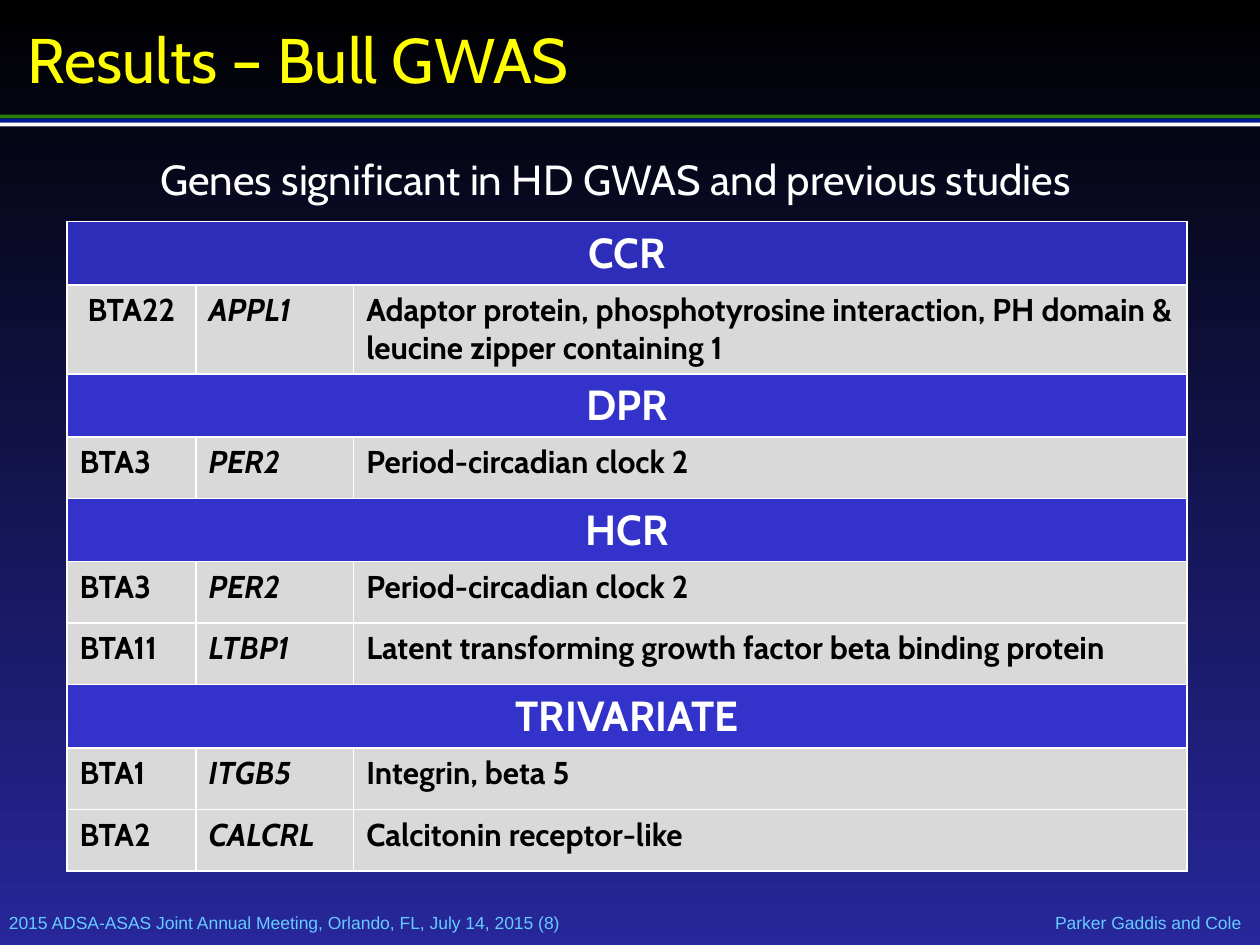
from dataclasses import dataclass

from pptx import Presentation
from pptx.dml.color import RGBColor
from pptx.enum.shapes import MSO_SHAPE
from pptx.enum.text import MSO_ANCHOR, PP_ALIGN
from pptx.util import Cm, Pt


@dataclass(frozen=True)
class Theme:
    font: str = "Cabin"
    footer_font: str = "Arial"
    title_size: int = 36
    heading_size: int = 24
    body_size: int = 18
    footer_size: int = 10
    title: str = "FFFF00"
    white: str = "FFFFFF"
    black: str = "000000"
    footer: str = "66CCFF"
    bg_bottom: str = "27279B"
    green: str = "2A7E00"
    blue: str = "001799"
    header: str = "2D2DB9"
    section: str = "3333CC"
    row: str = "D9D9D9"


theme = Theme()


def rgb(value):
    return RGBColor.from_string(value)


def write(tf, text, size, color, font=theme.font, align=PP_ALIGN.LEFT,
          bold=False, italic=False):
    """Fill a text frame with one formatted paragraph."""
    p = tf.paragraphs[0]
    p.text = text
    p.alignment = align
    p.font.name = font
    p.font.size = Pt(size)
    p.font.color.rgb = rgb(color)
    p.font.bold = bold
    p.font.italic = italic


prs = Presentation()
prs.slide_width, prs.slide_height = Cm(25.4), Cm(19.05)
s = prs.slides.add_slide(prs.slide_layouts[5])

# Background
bg = s.background.fill
bg.gradient()
bg.gradient_angle = 270
for stop, color, position in zip(bg.gradient_stops,
                                 (theme.black, theme.bg_bottom), (0, 1)):
    stop.color.rgb = rgb(color)
    stop.position = position

# Rules under the title
for top, color in ((2.31, theme.green), (2.47, theme.white), (2.39, theme.blue)):
    sp = s.shapes.add_shape(MSO_SHAPE.RECTANGLE, 0, Cm(top), prs.slide_width, Cm(0.08))
    sp.shadow.inherit = False
    sp.fill.solid()
    sp.fill.fore_color.rgb = rgb(color)
    sp.line.fill.background()

# Title
sp = s.shapes.title
sp.left, sp.top, sp.width, sp.height = Cm(0.43), Cm(0), Cm(24.54), Cm(2.34)
tf = sp.text_frame
tf.vertical_anchor = MSO_ANCHOR.MIDDLE
tf.margin_left = tf.margin_right = tf.margin_top = tf.margin_bottom = Cm(0.13)
write(tf, "Results – Bull GWAS", theme.title_size, theme.title)

# Subtitle
sp = s.shapes.add_textbox(Cm(1.83), Cm(2.97), Cm(21.16), Cm(1.5))
tf = sp.text_frame
tf.word_wrap = True
tf.margin_left = tf.margin_right = tf.margin_top = tf.margin_bottom = Cm(0.13)
write(tf, "Genes significant in HD GWAS and previous studies",
      theme.heading_size, theme.white, align=PP_ALIGN.CENTER)

# Gene table: a one-item row is a section heading
rows = [
    ("CCR",),
    ("BTA22", "APPL1", "Adaptor protein, phosphotyrosine interaction, "
     "PH domain & leucine zipper containing 1"),
    ("DPR",),
    ("BTA3", "PER2", "Period-circadian clock 2"),
    ("HCR",),
    ("BTA3", "PER2", "Period-circadian clock 2"),
    ("BTA11", "LTBP1", "Latent transforming growth factor beta binding protein"),
    ("TRIVARIATE",),
    ("BTA1", "ITGB5", "Integrin, beta 5"),
    ("BTA2", "CALCRL", "Calcitonin receptor-like"),
]
table = s.shapes.add_table(len(rows), 3, Cm(1.35), Cm(4.47), Cm(22.58), Cm(12.4)).table
table.horz_banding = False
for column, width in zip(table.columns, (2.6, 3.18, 16.8)):
    column.width = Cm(width)

for i, values in enumerate(rows):
    is_heading = len(values) == 1
    table.rows[i].height = Cm(1.8 if i == 1 else 1.24)
    if is_heading:
        table.cell(i, 0).merge(table.cell(i, 2))
        fill = theme.header if i == 0 else theme.section
    else:
        fill = theme.row
    for j, text in enumerate(values):
        cell = table.cell(i, j)
        cell.fill.solid()
        cell.fill.fore_color.rgb = rgb(fill)
        centred = is_heading or (i, j) == (1, 0)
        write(cell.text_frame, text,
              theme.heading_size if is_heading else theme.body_size,
              theme.white if is_heading else theme.black,
              align=PP_ALIGN.CENTER if centred else PP_ALIGN.LEFT,
              bold=True, italic=j == 1)

# Footer
for text, left, width, align in (
    ("2015 ADSA-ASAS Joint Annual Meeting, Orlando, FL, July 14, 2015 (8)",
     0.18, 19.8, PP_ALIGN.LEFT),
    ("Parker Gaddis and Cole", 20.22, 4.8, PP_ALIGN.RIGHT),
):
    sp = s.shapes.add_textbox(Cm(left), Cm(18.38), Cm(width), Cm(0.43))
    tf = sp.text_frame
    tf.word_wrap = True
    tf.vertical_anchor = MSO_ANCHOR.MIDDLE
    tf.margin_left = tf.margin_right = tf.margin_top = tf.margin_bottom = 0
    write(tf, text, theme.footer_size, theme.footer, theme.footer_font, align)

prs.save("out.pptx")
